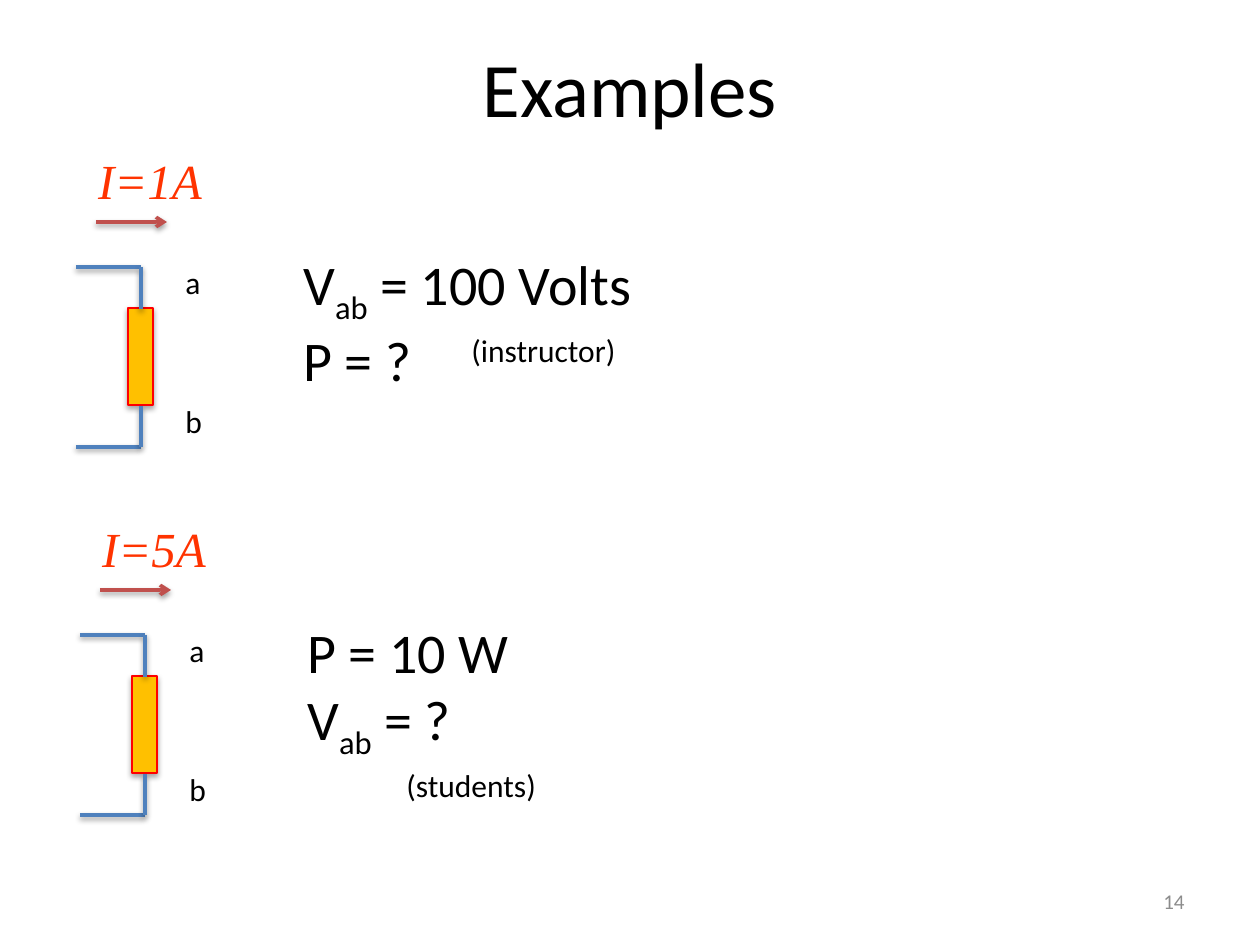
from dataclasses import dataclass

from lxml import etree
from pptx import Presentation
from pptx.dml.color import RGBColor
from pptx.enum import shapes, text
from pptx.oxml import ns
from pptx.util import Pt


@dataclass(frozen=True)
class Theme:
    sans: str = "Calibri"
    serif: str = "Times New Roman"
    ink: str = "000000"
    grey: str = "8C8C8C"
    amp: str = "FF3300"
    wire: str = "4F81BD"
    arrow: str = "C0504D"
    fill: str = "FFC000"
    edge: str = "FF0000"
    title: int = 44
    body: int = 32
    flow: int = 28
    label: int = 18
    foot: int = 12


T = Theme()
SUB = "ab"
LEFT, CENTER, RIGHT = (text.PP_ALIGN.LEFT, text.PP_ALIGN.CENTER, text.PP_ALIGN.RIGHT)


def px(n):
    return round(n * 914400 / 126)


def rgb(code):
    return RGBColor.from_string(code)


def add_text(slide, box, rows, size, color=T.ink, font=T.sans,
             align=LEFT, wrap=False, italic=None):
    frame = slide.shapes.add_textbox(*map(px, box)).text_frame
    frame.word_wrap = wrap
    if wrap:
        frame.vertical_anchor = text.MSO_ANCHOR.MIDDLE
    else:
        frame.auto_size = text.MSO_AUTO_SIZE.SHAPE_TO_FIT_TEXT
    for i, row in enumerate(rows):
        para = frame.add_paragraph() if i else frame.paragraphs[0]
        para.alignment = align
        for part in row:
            run = para.add_run()
            run.text = part
            run.font.size = Pt(size)
            run.font.name = font
            run.font.italic = italic
            run.font.color.rgb = rgb(color)
            if part == SUB:
                run.font._element.set("baseline", "-25000")


def add_shadow(shape, dist, alpha):
    props = shape._element.spPr
    effect = etree.SubElement(props, ns.qn("a:effectLst"))
    outer = etree.SubElement(effect, ns.qn("a:outerShdw"), blurRad="40000",
                             dist=str(dist), dir="5400000", rotWithShape="0")
    tint = etree.SubElement(outer, ns.qn("a:srgbClr"), val="000000")
    etree.SubElement(tint, ns.qn("a:alpha"), val=str(alpha * 1000))


def add_line(parent, ends, color, head=False):
    line = parent.shapes.add_connector(shapes.MSO_CONNECTOR.STRAIGHT, *map(px, ends))
    line.line.color.rgb = rgb(color)
    line.line.width = Pt(2)
    if head:
        etree.SubElement(line.line._get_or_add_ln(), ns.qn("a:tailEnd"), type="arrow")
    add_shadow(line, 20000, 38)


def add_load(parent, x, y):
    load = parent.shapes.add_shape(shapes.MSO_SHAPE.RECTANGLE,
                                   px(x), px(y), px(97), px(25))
    load.rotation = 90
    load.fill.solid()
    load.fill.fore_color.rgb = rgb(T.fill)
    load.line.color.rgb = rgb(T.edge)
    load.line.width = Pt(1.5)
    add_shadow(load, 23000, 35)


def add_case(slide, x, y, flow, rows, width):
    for name, top, wide in (("a", 257, 40), ("b", 396, 43)):
        add_text(slide, (x + 173, y + top, wide, 51), [[name]], T.label)
    group = slide.shapes.add_group_shape()
    add_load(group, x + 92, y + 344)
    left, right = x + 76, x + 141
    for outer, inner in ((447, 406), (267, 309)):
        add_line(group, (left, y + outer, right, y + outer), T.wire)
        add_line(group, (right, y + outer, right, y + inner), T.wire)
    add_line(slide, (x + 96, y + 222, x + 167, y + 222), T.arrow, head=True)
    add_text(slide, (x + 71, y + 116, 158, 127), [[flow]], T.flow, T.amp,
             T.serif, CENTER, True, True)
    add_text(slide, (x + 291, y + 243, width, 149), rows, T.body)


def main():
    deck = Presentation()
    deck.slide_width, deck.slide_height = px(1260), px(945)
    slide = deck.slides.add_slide(deck.slide_layouts[6])
    add_text(slide, (63, 8, 1134, 158), [["Examples"]], T.title,
             align=CENTER, wrap=True)
    add_case(slide, 0, 0, "I=1A", [["V", SUB, " = 100 Volts"], ["P = ?"]], 359)
    add_case(slide, 4, 368, "I=5A", [["P = 10 W"], ["V", SUB, " = ?"]], 229)
    add_text(slide, (459, 325, 171, 51), [["(instructor)"]], T.label)
    add_text(slide, (394, 760, 156, 51), [["(students)"]], T.label)
    add_text(slide, (903, 876, 294, 51), [["14"]], T.foot, T.grey,
             align=RIGHT, wrap=True)
    deck.save("out.pptx")


if __name__ == "__main__":
    main()
